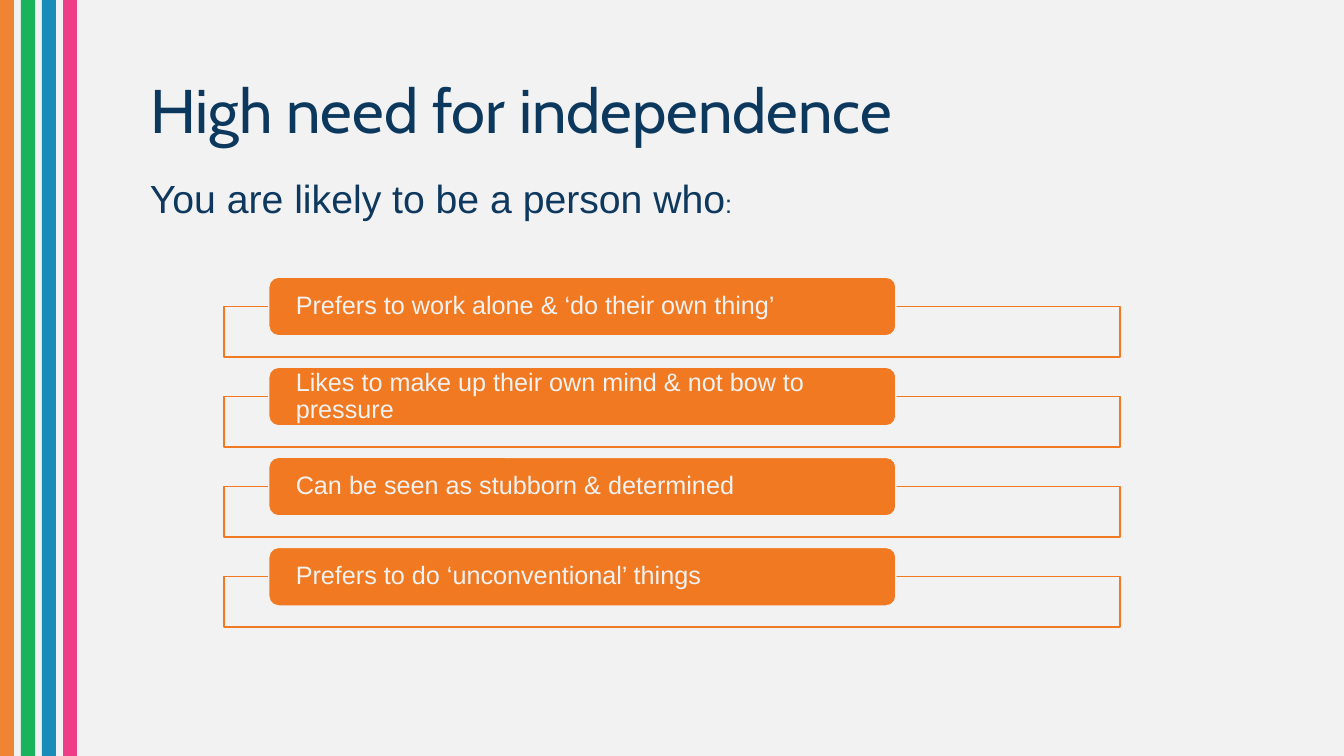
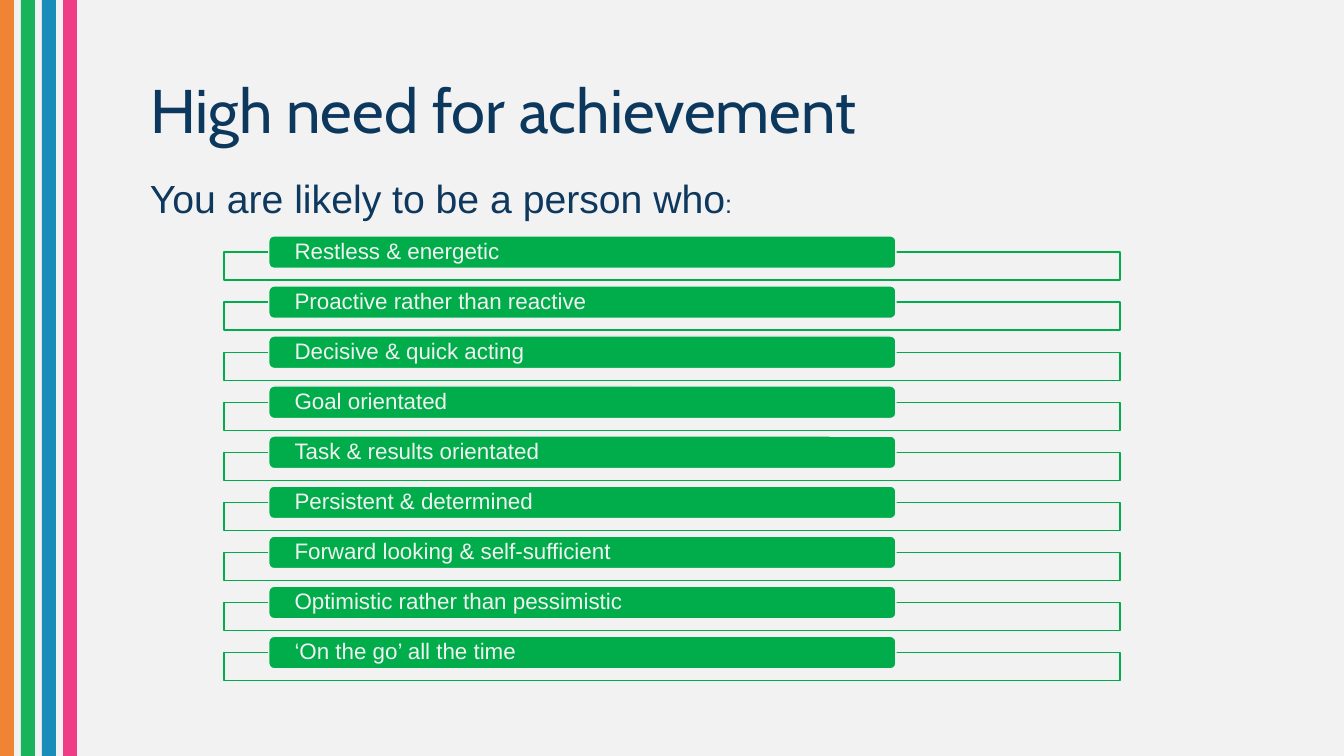
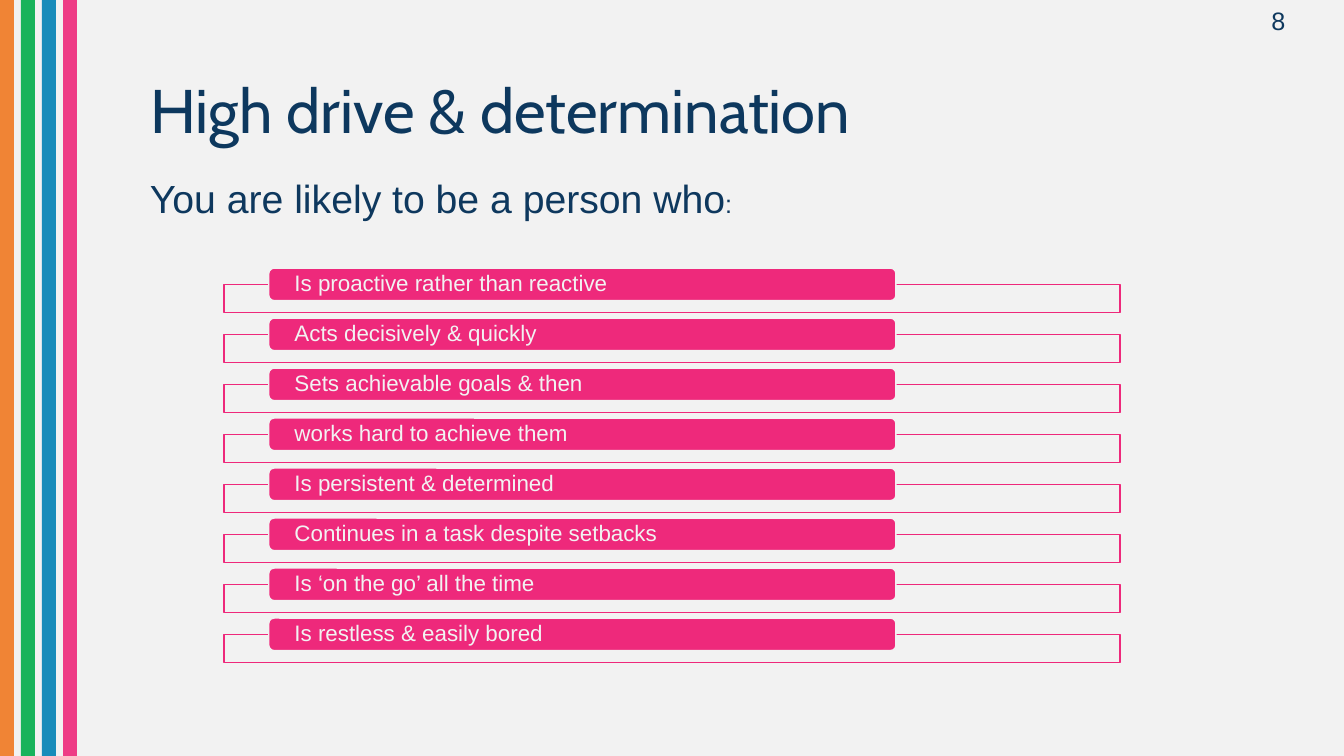
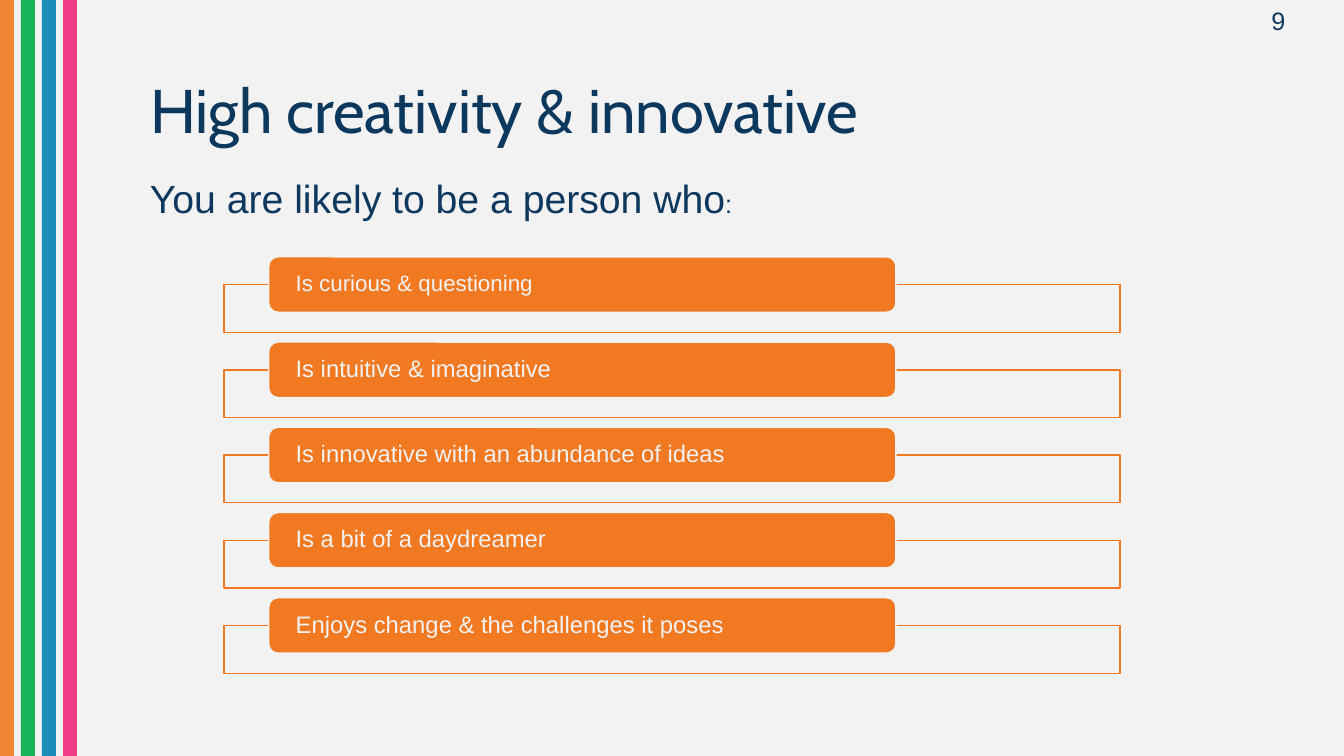
from dataclasses import dataclass

from lxml.etree import SubElement
from pptx import Presentation
from pptx.dml.color import RGBColor
from pptx.enum.shapes import MSO_SHAPE as Preset
from pptx.enum.text import MSO_ANCHOR as Anchor, MSO_AUTO_SIZE as AutoSize, PP_ALIGN as Align
from pptx.oxml.ns import qn
from pptx.presentation import Presentation as Deck
from pptx.shapes.autoshape import Shape
from pptx.slide import Slide
from pptx.text.text import TextFrame, _Paragraph as Paragraph
from pptx.util import Inches, Pt

COLUMNS, ROWS = 96, 54
CELL = Pt(10)  # square grid cell: 96 x 54 cells fill the slide

PALE, NAVY, INK = "F2F2F2", "0D385E", "0E385E"
ORANGE, GREEN, BLUE, PINK = "F07921", "01AD4B", "0281B4", "EE297B"
BODY_FONT, TITLE_FONT = "Arial", "Cabin"

STRIPES = (ORANGE, GREEN, BLUE, PINK)
STRIPE_PITCH = 1.5
TEXT_LEFT = 10
FRAME_LEFT, FRAME_WIDTH = 16, 64
PILL_LEFT = FRAME_LEFT + 0.05 * FRAME_WIDTH
PILL_WIDTH = 0.7 * FRAME_WIDTH
PILL_SHARE, FRAME_SHARE = 0.65, 0.56  # heights as shares of the row pitch


@dataclass(frozen=True)
class Trait:
    text: str
    size: float


@dataclass(frozen=True)
class Profile:
    """One slide; first_row and last_row are the tops of the outer pills."""
    title: str
    color: str
    first_row: float
    last_row: float
    traits: tuple[Trait, ...]
    number: str = ""


def traits(size: float, *texts: str) -> tuple[Trait, ...]:
    return tuple(Trait(text, size) for text in texts)


PROFILES = (
    Profile("High need for independence", ORANGE, 19.8, 39.1, traits(
        18,
        "Prefers to work alone & ‘do their own thing’",
        "Likes to make up their own mind & not bow to pressure",
        "Can be seen as stubborn & determined",
        "Prefers to do ‘unconventional’ things",
    )),
    Profile("High need for achievement", GREEN, 16.85, 45.45, traits(
        16,
        "Restless & energetic",
        "Proactive rather than reactive",
        "Decisive & quick acting",
        "Goal orientated",
        "Task & results orientated",
        "Persistent & determined",
        "Forward looking & self-sufficient",
        "Optimistic rather than pessimistic",
        "‘On the go’ all the time",
    )),
    Profile("High drive & determination", PINK, 19.15, 44.15, traits(
        16,
        "Is proactive rather than reactive",
        "Acts decisively & quickly",
        "Sets achievable goals & then",
        "works hard to achieve them",
        "Is persistent & determined",
        "Continues in a task despite setbacks",
        "Is ‘on the go’ all the time",
        "Is restless & easily bored",
    ), "8"),
    Profile("High creativity & innovative", ORANGE, 18.35, 42.7, traits(
        16,
        "Is curious & questioning",
    ) + traits(
        17,
        "Is intuitive & imaginative",
        "Is innovative with an abundance of ideas",
        "Is a bit of a daydreamer",
        "Enjoys change & the challenges it poses",
    ), "9"),
)


def rgb(color: str) -> RGBColor:
    return RGBColor.from_string(color)


def cells(*counts: float) -> tuple[int, ...]:
    return tuple(round(count * CELL) for count in counts)


def set_font(paragraph: Paragraph, name: str, color: str, size: float | None = None) -> None:
    paragraph.font.name = name
    paragraph.font.color.rgb = rgb(color)
    if size:
        paragraph.font.size = Pt(size)


def add_block(slide: Slide, preset: Preset, box: tuple[int, ...], fill: str,
              line: str = "", opacity: int = 100) -> Shape:
    block = slide.shapes.add_shape(preset, *box)
    block.shadow.inherit = False
    block.fill.solid()
    block.fill.fore_color.rgb = rgb(fill)
    if opacity < 100:
        fill_color = block.element.spPr.find(qn("a:solidFill"))[0]
        SubElement(fill_color, qn("a:alpha"), val=str(opacity * 1000))
    if line:
        block.line.color.rgb = rgb(line)
        block.line.width = Pt(1)
    else:
        block.line.fill.background()
    return block


def add_text_box(slide: Slide, box: tuple[int, ...]) -> TextFrame:
    frame = slide.shapes.add_textbox(*box).text_frame
    frame.word_wrap = True
    return frame


def style_master(deck: Deck, slide: Slide) -> None:
    """Give the master its background and stripes, which are drawn on a slide and moved."""
    master = deck.slide_master
    master.background.fill.solid()
    master.background.fill.fore_color.rgb = rgb(PALE)
    for index, color in enumerate(STRIPES):
        stripe = add_block(slide, Preset.RECTANGLE,
                           cells(index * STRIPE_PITCH, 0, 1, ROWS), color, opacity=90)
        stripe.element.nvSpPr.cNvPr.set("id", str(100 + index))
        master.element.cSld.spTree.insert(2 + index, stripe.element)


def add_heading(slide: Slide, profile: Profile) -> None:
    title = slide.shapes.title
    title.left, title.top, title.width, title.height = cells(TEXT_LEFT, 2.9, 63, 10.4)
    frame = title.text_frame
    frame.text = profile.title
    frame.word_wrap = True
    frame.auto_size = AutoSize.NONE
    frame.vertical_anchor = Anchor.MIDDLE
    heading = frame.paragraphs[0]
    heading.alignment = Align.LEFT
    heading.line_spacing = 0.9
    set_font(heading, TITLE_FONT, NAVY, 44)

    if profile.number:
        number = add_text_box(slide, cells(90.1, 0, 5.9, 2.9)).paragraphs[0]
        number.text = profile.number
        set_font(number, BODY_FONT, INK, 18)

    lead_frame = add_text_box(slide, cells(TEXT_LEFT, 12.1, 56, 4.1))
    lead_frame.auto_size = AutoSize.SHAPE_TO_FIT_TEXT
    lead = lead_frame.paragraphs[0]
    for text, size in (("You are likely to be a person who", 28), (":", 18)):
        run = lead.add_run()
        run.text = text
        run.font.size = Pt(size)
    set_font(lead, BODY_FONT, INK)


def add_trait(slide: Slide, trait: Trait, color: str, top: float, pitch: float) -> None:
    pill_height = PILL_SHARE * pitch
    add_block(slide, Preset.RECTANGLE,
              cells(FRAME_LEFT, top + pill_height / 2, FRAME_WIDTH, FRAME_SHARE * pitch),
              PALE, color, opacity=90)
    pill = add_block(slide, Preset.ROUNDED_RECTANGLE,
                     cells(PILL_LEFT, top, PILL_WIDTH, pill_height), color, PALE)
    frame = pill.text_frame
    frame.word_wrap = True
    frame.vertical_anchor = Anchor.MIDDLE
    frame.margin_left = frame.margin_right = Inches(0.24)
    frame.margin_top = frame.margin_bottom = 0
    label = frame.paragraphs[0]
    label.text = trait.text
    label.alignment = Align.LEFT
    label.line_spacing = 0.9
    set_font(label, BODY_FONT, PALE, trait.size)


def add_profile(slide: Slide, profile: Profile) -> None:
    add_heading(slide, profile)
    pitch = (profile.last_row - profile.first_row) / (len(profile.traits) - 1)
    for index, trait in enumerate(profile.traits):
        add_trait(slide, trait, profile.color, profile.first_row + index * pitch, pitch)


def main() -> None:
    deck = Presentation()
    deck.slide_width, deck.slide_height = cells(COLUMNS, ROWS)
    title_only = deck.slide_layouts.get_by_name("Title Only")
    slides = [deck.slides.add_slide(title_only) for _ in PROFILES]
    style_master(deck, slides[0])
    for slide, profile in zip(slides, PROFILES):
        add_profile(slide, profile)
    deck.save("out.pptx")


if __name__ == "__main__":
    main()
